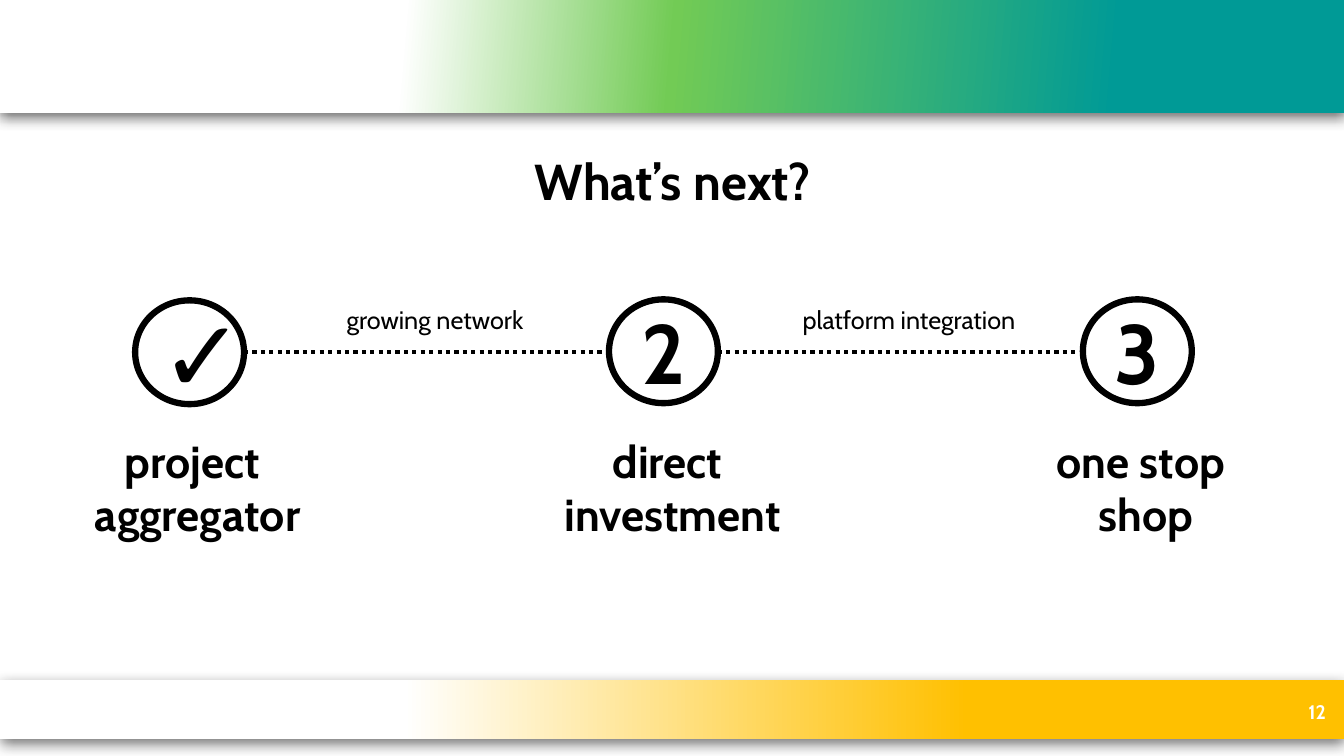
import dataclasses

import lxml.etree
import pptx
import pptx.dml.color
import pptx.enum.dml
import pptx.enum.shapes
import pptx.enum.text
import pptx.oxml.ns
import pptx.util

Inches = pptx.util.Inches
Pt = pptx.util.Pt
qn = pptx.oxml.ns.qn
ALIGN = pptx.enum.text.PP_ALIGN
FIT = pptx.enum.text.MSO_AUTO_SIZE


@dataclasses.dataclass(frozen=True)
class Theme:
    """Colours, fonts and type sizes of the slide."""
    ink: str = "000000"
    paper: str = "FFFFFF"
    green: str = "72CB55"
    teal: str = "009A96"
    amber: str = "FFC000"
    shadow: str = "404040"
    font: str = "Cabin"
    tick_font: str = "Arial"
    title: int = 36
    number: int = 60
    tick: int = 72
    label: int = 32
    link: int = 18
    page_number: int = 14


THEME = Theme()
TITLE = "What’s next?"
PAGE_NUMBER = "12"
STAGES = [
    {"mark": "✓", "label": ["project ", "aggregator"], "label_box": (0.65, 2.62), "top": 2.98},
    {"mark": "2", "label": ["direct ", "investment"], "label_box": (5.31, 2.72), "top": 2.97},
    {"mark": "3", "label": ["one stop ", "shop"], "label_box": (10.17, 2.39), "top": 2.97},
]
LINKS = [("growing network", 3.2, 2.23), ("platform integration", 7.69, 2.65)]
BANDS = [
    {"top": 6.75, "height": 0.58, "slant": 0, "stops": [(30, THEME.paper), (72, THEME.amber)]},
    {"top": 0, "height": 1.12, "slant": 5,
     "stops": [(30, THEME.paper), (50, THEME.green), (83, THEME.teal)]},
]
SLIDE_WIDTH, SLIDE_HEIGHT = 13.33, 7.5
FIRST_LEFT, STAGE_STEP = 1.34, 4.7
CIRCLE_WIDTH, CIRCLE_HEIGHT = 1.08, 1.03
LINK_Y, LINK_TEXT_TOP, LABEL_TOP = 3.49, 2.97, 4.25


def rgb(value):
    """Turn a hex string into a colour."""
    return pptx.dml.color.RGBColor.from_string(value)


def write(frame, lines, size, bold=True, color=THEME.ink, font=THEME.font, align=ALIGN.CENTER):
    """Fill a text frame with one paragraph per line."""
    for index, line in enumerate(lines):
        para = frame.paragraphs[0] if index == 0 else frame.add_paragraph()
        para.alignment = align
        span = para.add_run()
        span.text = line
        span.font.name, span.font.size, span.font.bold = font, Pt(size), bold
        span.font.color.rgb = rgb(color)


def add_text(page, area, lines, size, **style):
    """Add an unwrapped text box that fits its text."""
    box = page.shapes.add_textbox(*map(Inches, area))
    box.text_frame.word_wrap = False
    box.text_frame.auto_size = FIT.SHAPE_TO_FIT_TEXT
    write(box.text_frame, lines, size, **style)
    return box


def add_color(parent, value):
    """Append a colour element."""
    return lxml.etree.SubElement(parent, qn("a:srgbClr"), val=value)


def add_band(page, band):
    """Add a full-width gradient band with a soft shadow."""
    shape = page.shapes.add_shape(
        pptx.enum.shapes.MSO_SHAPE.RECTANGLE, 0, Inches(band["top"]),
        Inches(SLIDE_WIDTH), Inches(band["height"]))
    shape.line.fill.background()
    shape.fill.gradient()
    shape.fill.gradient_angle = -band["slant"] % 360
    properties = shape._element.spPr
    stops = properties.find(".//" + qn("a:gsLst"))
    for stop in list(stops):
        stops.remove(stop)
    for position, color in band["stops"]:
        add_color(lxml.etree.SubElement(stops, qn("a:gs"), pos=str(position * 1000)), color)
    shape.shadow.inherit = False
    shadow = lxml.etree.SubElement(
        properties.find(qn("a:effectLst")), qn("a:outerShdw"),
        blurRad=str(Pt(9.8)), dist=str(Pt(3)), dir="5400000", algn="ctr", rotWithShape="0")
    lxml.etree.SubElement(add_color(shadow, THEME.shadow), qn("a:alpha"), val="75000")


def add_stage(page, left, stage):
    """Add a circled mark and its label."""
    circle = page.shapes.add_shape(
        pptx.enum.shapes.MSO_SHAPE.OVAL, Inches(left), Inches(stage["top"]),
        Inches(CIRCLE_WIDTH), Inches(CIRCLE_HEIGHT))
    circle.shadow.inherit = False
    circle.fill.solid()
    circle.fill.fore_color.rgb = rgb(THEME.paper)
    circle.line.color.rgb = rgb(THEME.ink)
    circle.line.width = Pt(4.5)
    circle.text_frame.vertical_anchor = pptx.enum.text.MSO_ANCHOR.MIDDLE
    done = stage["mark"] == "✓"
    write(circle.text_frame, [stage["mark"]], THEME.tick if done else THEME.number,
          bold=not done, font=THEME.tick_font if done else THEME.font)
    label_left, label_width = stage["label_box"]
    add_text(page, (label_left, LABEL_TOP, label_width, 1.18), stage["label"], THEME.label)


def add_link(page, left, link):
    """Add a dotted line between two circles and its caption."""
    caption, caption_left, caption_width = link
    line = page.shapes.add_connector(
        pptx.enum.shapes.MSO_CONNECTOR.STRAIGHT, Inches(left + CIRCLE_WIDTH), Inches(LINK_Y),
        Inches(left + STAGE_STEP), Inches(LINK_Y))
    line.line.color.rgb = rgb(THEME.ink)
    line.line.width = Pt(3)
    line.line.dash_style = pptx.enum.dml.MSO_LINE.ROUND_DOT
    lxml.etree.SubElement(line._element.spPr, qn("a:effectLst"))
    add_text(page, (caption_left, LINK_TEXT_TOP, caption_width, 0.4), [caption],
             THEME.link, bold=False)


def main():
    """Build and save the slide."""
    deck = pptx.Presentation()
    deck.slide_width, deck.slide_height = Inches(SLIDE_WIDTH), Inches(SLIDE_HEIGHT)
    page = deck.slides.add_slide(deck.slide_layouts[5])
    for band in BANDS:
        add_band(page, band)

    title = page.shapes.title
    title.left, title.top, title.width, title.height = map(Inches, (0.92, 1.48, 11.5, 0.7))
    title.text_frame.word_wrap = True
    title.text_frame.auto_size = FIT.NONE
    title.text_frame.vertical_anchor = pptx.enum.text.MSO_ANCHOR.MIDDLE
    write(title.text_frame, [TITLE], THEME.title)
    title.text_frame.paragraphs[0].line_spacing = 0.9

    for index, stage in enumerate(STAGES):
        add_stage(page, FIRST_LEFT + index * STAGE_STEP, stage)
    for index, link in enumerate(LINKS):
        add_link(page, FIRST_LEFT + index * STAGE_STEP, link)

    number = page.shapes.add_textbox(*map(Inches, (10.25, 6.86, 3, 0.4)))
    number.text_frame.word_wrap = True
    number.text_frame.vertical_anchor = pptx.enum.text.MSO_ANCHOR.MIDDLE
    write(number.text_frame, [PAGE_NUMBER], THEME.page_number,
          color=THEME.paper, align=ALIGN.RIGHT)
    deck.save("out.pptx")


if __name__ == "__main__":
    main()
